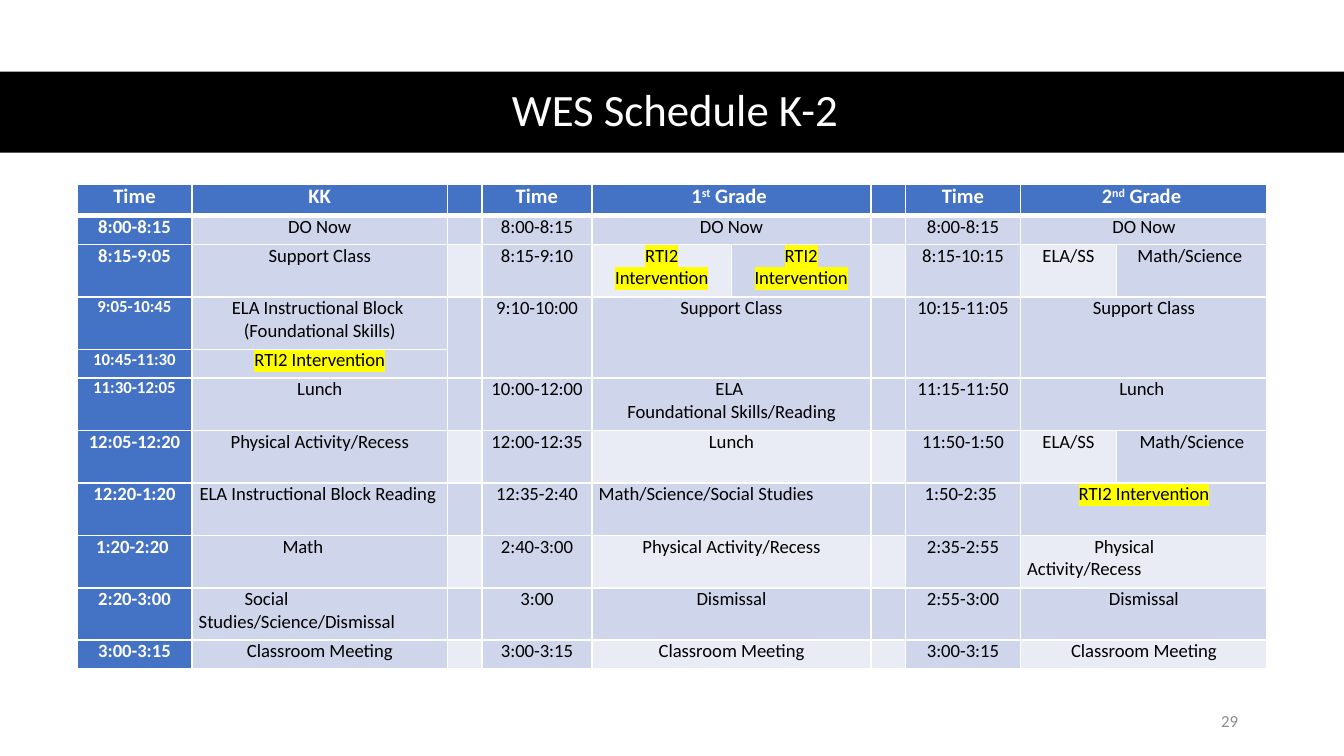
import lxml.etree
import pptx
import pptx.dml.color
import pptx.enum.shapes
import pptx.enum.text
import pptx.oxml.ns
import pptx.util

Pt = pptx.util.Pt
ALIGN = pptx.enum.text.PP_ALIGN
MIDDLE = pptx.enum.text.MSO_ANCHOR.MIDDLE
qn = pptx.oxml.ns.qn

BLUE, BAND_DARK, BAND_LIGHT = "4472C4", "CFD5EA", "E9EBF5"
WHITE, BLACK, YELLOW = "FFFFFF", "000000", "FFFF00"

COLUMN_WIDTHS = [61.7, 136.8, 18.5, 59, 74.7, 74.7, 18.5, 61.7, 51.4, 80.8]
ROW_HEIGHTS = [16.8, 15.6, 28.1, 28.1, 15.4] + [28.1] * 5 + [15.4]
BANDED_COLUMNS = {2, 4, 6, 8}
CONTENT_COLUMNS = [0, 1, 3, 4, 7, 8]
SPLIT_COLUMNS = {4, 8}
INTERVENTION = "RTI2 Intervention"

# Kindergarten, first grade and second grade, each as time and activity.
# A pair of activities splits the grade; ^ encloses superscript text.
SCHEDULE = [
    ["Time", "KK", "Time", "1^st^ Grade ", "Time", "2^nd^ Grade "],
    ["8:00-8:15", "DO Now"] * 3,
    ["8:15-9:05", "Support Class", "8:15-9:10", (INTERVENTION, INTERVENTION),
     "8:15-10:15", ("ELA/SS", "Math/Science ")],
    ["9:05-10:45", "ELA Instructional Block \n(Foundational Skills)",
     "9:10-10:00", "Support Class", "10:15-11:05", "Support Class"],
    ["10:45-11:30", INTERVENTION],
    ["11:30-12:05", "Lunch", "10:00-12:00", "ELA \nFoundational Skills/Reading",
     "11:15-11:50", "Lunch "],
    ["12:05-12:20", "Physical Activity/Recess", "12:00-12:35", "Lunch",
     "11:50-1:50", ("ELA/SS", "Math/Science")],
    ["12:20-1:20", "ELA Instructional Block Reading ", "12:35-2:40",
     "Math/Science/Social Studies", "1:50-2:35 ", INTERVENTION],
    ["1:20-2:20 ", "Math", "2:40-3:00", "Physical Activity/Recess",
     "2:35-2:55", "Physical Activity/Recess"],
    ["2:20-3:00", "Social Studies/Science/Dismissal", "3:00", "Dismissal",
     "2:55-3:00", "Dismissal"],
    ["3:00-3:15", "Classroom Meeting"] * 3,
]
TALL_ROW = 3                # grades 1 and 2 span this row and the next
SMALL_TIME_ROWS = {3, 4, 5}
FIRST_LINE_INDENTS = {(7, 4): 0, (8, 8): 36, (9, 1): 24.6}  # left-aligned
EXTRA_RIGHT_MARGINS = {(8, 1): 18}


def rgb(hex_color):
    return pptx.dml.color.RGBColor.from_string(hex_color)


def set_attributes(target, values):
    for name, value in values.items():
        setattr(target, name, value)


def add_run(paragraph, text, size, color, bold=False, highlight=None, raised=False):
    run = paragraph.add_run()
    run.text = text
    run.font.color.rgb = rgb(color)
    properties = run._r.get_or_add_rPr()
    if highlight:
        mark = lxml.etree.SubElement(properties, qn("a:highlight"))
        lxml.etree.SubElement(mark, qn("a:srgbClr"), val=highlight)
    if raised:
        properties.set("baseline", "30000")
    set_attributes(run.font, {"name": "Calibri", "size": Pt(size), "bold": bold})


def set_borders(cell, row):
    widths = {"L": 1, "R": 1, "T": 3 if row == 1 else 1, "B": 3 if row == 0 else 1}
    for side, width in widths.items():
        line = lxml.etree.SubElement(cell._tc.get_or_add_tcPr(), qn(f"a:ln{side}"),
                                     w=str(Pt(width)))
        fill = lxml.etree.SubElement(line, qn("a:solidFill"))
        lxml.etree.SubElement(fill, qn("a:srgbClr"), val=WHITE)


def format_cell(cell, row, column):
    set_attributes(cell, {
        "margin_left": Pt(3.6), "margin_top": 0, "margin_bottom": 0,
        "margin_right": Pt(3.6 + EXTRA_RIGHT_MARGINS.get((row, column), 0))})
    set_borders(cell, row)
    if row == 0 or column == 0:
        fill = BLUE
    else:
        fill = BAND_LIGHT if column in BANDED_COLUMNS and row % 2 == 0 else BAND_DARK
    cell.fill.solid()
    cell.fill.fore_color.rgb = rgb(fill)
    # Keep empty cells from stretching their rows
    lxml.etree.SubElement(cell.text_frame.paragraphs[0]._p, qn("a:endParaRPr"), sz="1000")


def write_cell(cell, row, column, text):
    heading = row == 0 or column == 0
    size = 11 if row == 0 else 9 if column == 0 and row in SMALL_TIME_ROWS else 10
    for index, line in enumerate(text.split("\n")):
        frame = cell.text_frame
        paragraph = frame.add_paragraph() if index else frame.paragraphs[0]
        paragraph.alignment = ALIGN.CENTER
        if (row, column) in FIRST_LINE_INDENTS:
            paragraph.alignment = ALIGN.LEFT
            indent = Pt(FIRST_LINE_INDENTS[row, column])
            paragraph._p.get_or_add_pPr().set("indent", str(indent))
        for part, piece in enumerate(line.split("^")):
            add_run(paragraph, piece, size, WHITE if heading else BLACK, heading,
                    YELLOW if text == INTERVENTION else None, part % 2 == 1)


def add_schedule(slide):
    schedule = slide.shapes.add_table(
        len(ROW_HEIGHTS), len(COLUMN_WIDTHS), Pt(41.2), Pt(98.6),
        Pt(sum(COLUMN_WIDTHS)), Pt(sum(ROW_HEIGHTS))).table
    set_attributes(schedule, {"first_row": False, "horz_banding": False})
    for column, width in zip(schedule.columns, COLUMN_WIDTHS):
        column.width = Pt(width)
    for row, height in enumerate(ROW_HEIGHTS):
        schedule.rows[row].height = Pt(height)
        for column in range(len(COLUMN_WIDTHS)):
            format_cell(schedule.cell(row, column), row, column)

    for row, entries in enumerate(SCHEDULE):
        last_row = row + 1 if row == TALL_ROW else row
        for column, entry in zip(CONTENT_COLUMNS, entries):
            activities = entry if isinstance(entry, tuple) else (entry,)
            for offset, text in enumerate(activities):
                write_cell(schedule.cell(row, column + offset), row, column + offset, text)
            last_column = column
            if column in SPLIT_COLUMNS and len(activities) == 1:
                last_column += 1
            if column > 1 and (last_row, last_column) != (row, column):
                schedule.cell(row, column).merge(schedule.cell(last_row, last_column))
    for spacer in (2, 6):
        schedule.cell(TALL_ROW, spacer).merge(schedule.cell(TALL_ROW + 1, spacer))


def add_title(slide):
    title = slide.shapes.title
    set_attributes(title, {"left": Pt(33.1), "top": Pt(38.2),
                           "width": Pt(662.4), "height": Pt(43.9)})
    title.text_frame.vertical_anchor = MIDDLE
    heading = title.text_frame.paragraphs[0]
    set_attributes(heading, {"alignment": ALIGN.CENTER, "line_spacing": 0.9})
    add_run(heading, "WES Schedule K-2 ", 24, WHITE)

    # Black band behind the title
    band = slide.shapes.add_shape(pptx.enum.shapes.MSO_SHAPE.RECTANGLE,
                                  0, Pt(38.4), Pt(720), Pt(43.4))
    band.shadow.inherit = False
    band.fill.solid()
    band.fill.fore_color.rgb = rgb(BLACK)
    band.line.fill.background()
    title._element.addprevious(band._element)


def add_page_number(slide):
    frame = slide.shapes.add_textbox(Pt(508.3), Pt(375.1), Pt(162), Pt(21.6)).text_frame
    set_attributes(frame, {"word_wrap": True, "vertical_anchor": MIDDLE})
    number = frame.paragraphs[0]
    set_attributes(number, {"alignment": ALIGN.RIGHT, "space_after": Pt(6)})
    add_run(number, "29", 9, "8C8C8C")


def main():
    deck = pptx.Presentation()
    set_attributes(deck, {"slide_width": Pt(720), "slide_height": Pt(405)})
    slide = deck.slides.add_slide(deck.slide_layouts[5])
    add_title(slide)
    add_page_number(slide)
    add_schedule(slide)
    deck.save("out.pptx")


if __name__ == "__main__":
    main()
